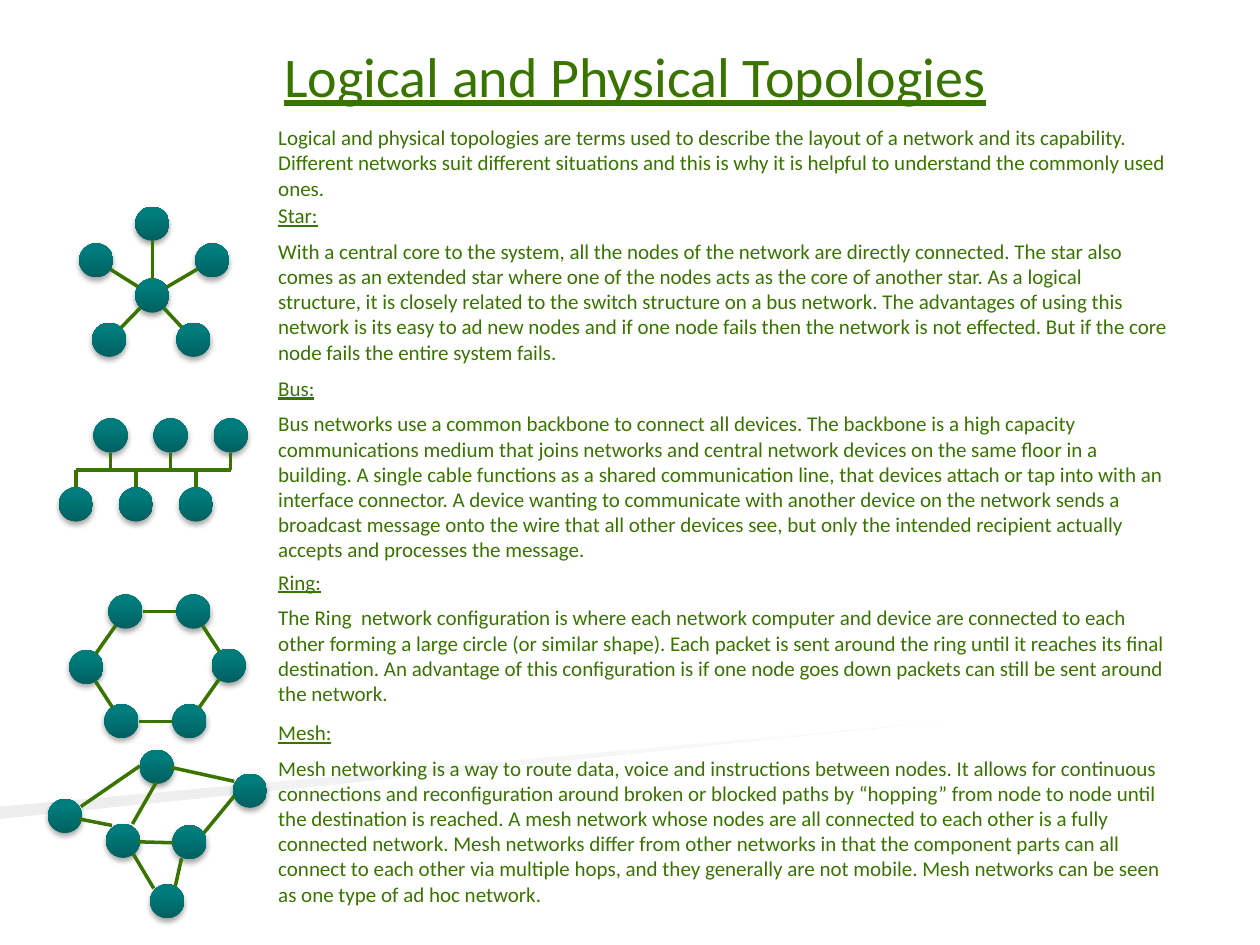
from dataclasses import dataclass
from math import hypot

from lxml.etree import SubElement
from pptx import Presentation
from pptx.dml.color import RGBColor
from pptx.enum.shapes import MSO_CONNECTOR as Connector, MSO_SHAPE as Preset
from pptx.enum.text import MSO_ANCHOR as Anchor, MSO_AUTO_SIZE as AutoSize, PP_ALIGN as Align
from pptx.oxml.ns import qn
from pptx.util import Cm, Pt


@dataclass(frozen=True)
class Theme:
    font: str = "Calibri"
    green: str = "3A7400"
    white: str = "FFFFFF"
    node_stops: tuple = ((0, "006060"), (80, "007C7C"), (100, "007D7D"))
    wedge_stops: tuple = ((0, "EDEDED"), (100, "FFFFFF"))
    title_size: int = 32
    body_size: int = 12
    paragraph_gap: int = 6
    link_width: int = 2
    node_size: float = 0.69


TEXT_LEFT, TEXT_WIDTH = 5.36, 18.47

INTRO = (
    "Logical and physical topologies are terms used to describe the layout of a network and its "
    "capability. Different networks suit different situations and this is why it is helpful to "
    "understand the commonly used ones."
)

# heading, top, height, description
SECTIONS = [
    ("Star:", 3.96, 3.56,
     "With a central core to the system, all the nodes of the network are directly connected. The "
     "star also comes as an extended star where one of the nodes acts as the core of another star. "
     "As a logical structure, it is closely related to the switch structure on a bus network. The "
     "advantages of using this network is its easy to ad new nodes and if one node fails then the "
     "network is not effected. But if the core node fails the entire system fails."),
    ("Bus:", 7.44, 4.11,
     "Bus networks use a common backbone to connect all devices. The backbone is a high capacity "
     "communications medium that joins networks and central network devices on the same floor in a "
     "building. A single cable functions as a shared communication line, that devices attach or tap "
     "into with an interface connector. A device wanting to communicate with another device on the "
     "network sends a broadcast message onto the wire that all other devices see, but only the "
     "intended recipient actually accepts and processes the message."),
    ("Ring:", 11.35, 3.07,
     "The Ring  network configuration is where each network computer and device are connected to "
     "each other forming a large circle (or similar shape). Each packet is sent around the ring "
     "until it reaches its final destination. An advantage of this configuration is if one node "
     "goes down packets can still be sent around the network."),
    ("Mesh:", 14.38, 4.11,
     "Mesh networking is a way to route data, voice and instructions between nodes. It allows for "
     "continuous connections and reconfiguration around broken or blocked paths by “hopping” from "
     "node to node until the destination is reached. A mesh network whose nodes are all connected "
     "to each other is a fully connected network. Mesh networks differ from other networks in that "
     "the component parts can all connect to each other via multiple hops, and they generally are "
     "not mobile. Mesh networks can be seen as one type of ad hoc network."),
]

# Node centres and line ends, in cm
STAR_HUB = (3.07, 5.96)
STAR_NODES = [(1.94, 5.25), (4.28, 5.25), (3.07, 4.51), (2.2, 6.85), (3.9, 6.85)]
BUS_UPPER_Y, BUS_TRUNK_Y, BUS_LOWER_Y = 8.78, 9.47, 10.17
BUS_UPPER_X, BUS_LOWER_X, BUS_STEP = 2.23, 1.53, 1.21
RING_NODES = [(4.61, 13.42), (3.82, 14.54), (2.45, 14.54),
              (1.74, 13.45), (2.53, 12.33), (3.9, 12.33)]
MESH_NODES = [(3.82, 16.98), (1.31, 16.45), (2.48, 16.95),
              (3.37, 18.17), (5.04, 15.94), (3.16, 15.46)]
MESH_LINKS = [
    ((1.6, 16.51), (2.26, 16.64)), ((2.79, 16.97), (3.48, 16.99)),
    ((2.67, 16.61), (3.15, 15.77)), ((2.69, 17.22), (3.1, 17.91)),
    ((3.66, 17.3), (3.53, 17.88)), ((3.45, 15.47), (4.72, 15.75)),
    ((1.63, 16.26), (2.82, 15.44)), ((4.72, 16.05), (4.11, 16.79)),
]


class TopologySlide:
    def __init__(self, slide, theme):
        self.slide, self.shapes, self.theme = slide, slide.shapes, theme

    def fill_text(self, frame, lines, size, align=Align.LEFT):
        """Fill a text frame with (text, underlined) lines."""
        frame_format = {"word_wrap": True, "vertical_anchor": Anchor.TOP,
                        "auto_size": AutoSize.SHAPE_TO_FIT_TEXT}
        for name, value in frame_format.items():
            setattr(frame, name, value)
        for index, (text, underlined) in enumerate(lines):
            paragraph = frame.add_paragraph() if index else frame.paragraphs[0]
            paragraph.alignment = align
            paragraph.space_before = Pt(self.theme.paragraph_gap if index else 0)
            run = paragraph.add_run()
            run.text = text
            font_format = {"name": self.theme.font, "size": Pt(size), "underline": underlined}
            for name, value in font_format.items():
                setattr(run.font, name, value)
            run.font.color.rgb = RGBColor.from_string(self.theme.green)

    def title(self, text, left, top, width, height):
        title = self.shapes.title
        place = {"left": left, "top": top, "width": width, "height": height}
        for name, value in place.items():
            setattr(title, name, Cm(value))
        self.fill_text(title.text_frame, [(text, True)], self.theme.title_size, Align.CENTER)
        title.element.getparent().append(title.element)  # in front of the backdrop

    def text(self, lines, top, height):
        box = self.shapes.add_textbox(Cm(TEXT_LEFT), Cm(top), Cm(TEXT_WIDTH), Cm(height))
        self.fill_text(box.text_frame, lines, self.theme.body_size)

    def gradient(self, shape, stops, angle):
        shape.fill.gradient()
        shape.fill.gradient_angle = angle
        stop_list = shape.element.spPr.find(qn("a:gradFill")).find(qn("a:gsLst"))
        for old_stop in list(stop_list):
            stop_list.remove(old_stop)
        for percent, color in stops:
            stop = SubElement(stop_list, qn("a:gs"), pos=str(percent * 1000))
            SubElement(stop, qn("a:srgbClr"), val=color)

    def polygon(self, points):
        (start_x, start_y), *others = [(Cm(x), Cm(y)) for x, y in points]
        builder = self.shapes.build_freeform(start_x, start_y)
        builder.add_line_segments(others, close=True)
        outline = builder.convert_to_shape()
        outline.line.fill.background()
        outline.shadow.inherit = False
        return outline

    def backdrop(self):
        wedge = self.polygon([(22.73, 14.15), (0, 16.51), (0, 11.86), (22.73, 6.35)])
        self.gradient(wedge, self.theme.wedge_stops, 0)
        cover = self.polygon([(23.42, 14.15), (0, 16.26), (0, 0.05), (23.5, 0)])
        cover.fill.solid()
        cover.fill.fore_color.rgb = RGBColor.from_string(self.theme.white)

    def node(self, center):
        size = self.theme.node_size
        left, top = (Cm(value - size / 2) for value in center)
        node = self.shapes.add_shape(Preset.OVAL, left, top, Cm(size), Cm(size))
        node.line.fill.background()
        self.gradient(node, self.theme.node_stops, 90)
        node.shadow.inherit = False
        shadow = SubElement(node.element.spPr.find(qn("a:effectLst")), qn("a:outerShdw"),
                            blurRad="40000", dist="23000", dir="5400000", rotWithShape="0")
        black = SubElement(shadow, qn("a:srgbClr"), val="000000")
        SubElement(black, qn("a:alpha"), val="35000")

    def line(self, start, end):
        ends = [Cm(value) for value in (*start, *end)]
        line = self.shapes.add_connector(Connector.STRAIGHT, *ends)
        line.line.width = Pt(self.theme.link_width)
        line.line.color.rgb = RGBColor.from_string(self.theme.green)
        SubElement(line.element.spPr, qn("a:effectLst"))

    def link(self, first, second):
        """Draw a line between the rims of two nodes, given their centres."""
        dx, dy = second[0] - first[0], second[1] - first[1]
        trim = self.theme.node_size / 2 / hypot(dx, dy)
        self.line((first[0] + dx * trim, first[1] + dy * trim),
                  (second[0] - dx * trim, second[1] - dy * trim))

    def bus(self):
        radius = self.theme.node_size / 2
        for first_x, y, rim in ((BUS_UPPER_X, BUS_UPPER_Y, radius),
                                (BUS_LOWER_X, BUS_LOWER_Y, -radius)):
            for x in (first_x + BUS_STEP * step for step in range(3)):
                self.node((x, y))
                self.line((x, BUS_TRUNK_Y), (x, y + rim))
        self.line((BUS_LOWER_X, BUS_TRUNK_Y), (BUS_UPPER_X + 2 * BUS_STEP, BUS_TRUNK_Y))


def main():
    deck = Presentation()
    deck.slide_width, deck.slide_height = Cm(25.4), Cm(19.05)
    page = TopologySlide(deck.slides.add_slide(deck.slide_layouts[5]), Theme())

    page.backdrop()
    page.title("Logical and Physical Topologies", 4.5, 0.71, 16.61, 1.6)
    page.text([(INTRO, False)], 2.39, 1.8)
    for heading, top, height, description in SECTIONS:
        page.text([(heading, True), (description, False)], top, height)

    for center in [STAR_HUB, *STAR_NODES, *RING_NODES, *MESH_NODES]:
        page.node(center)
    for center in STAR_NODES:
        page.link(STAR_HUB, center)
    page.bus()
    for first, second in zip(RING_NODES, RING_NODES[1:] + RING_NODES[:1]):
        page.link(first, second)
    for start, end in MESH_LINKS:
        page.line(start, end)

    deck.save("out.pptx")


if __name__ == "__main__":
    main()
